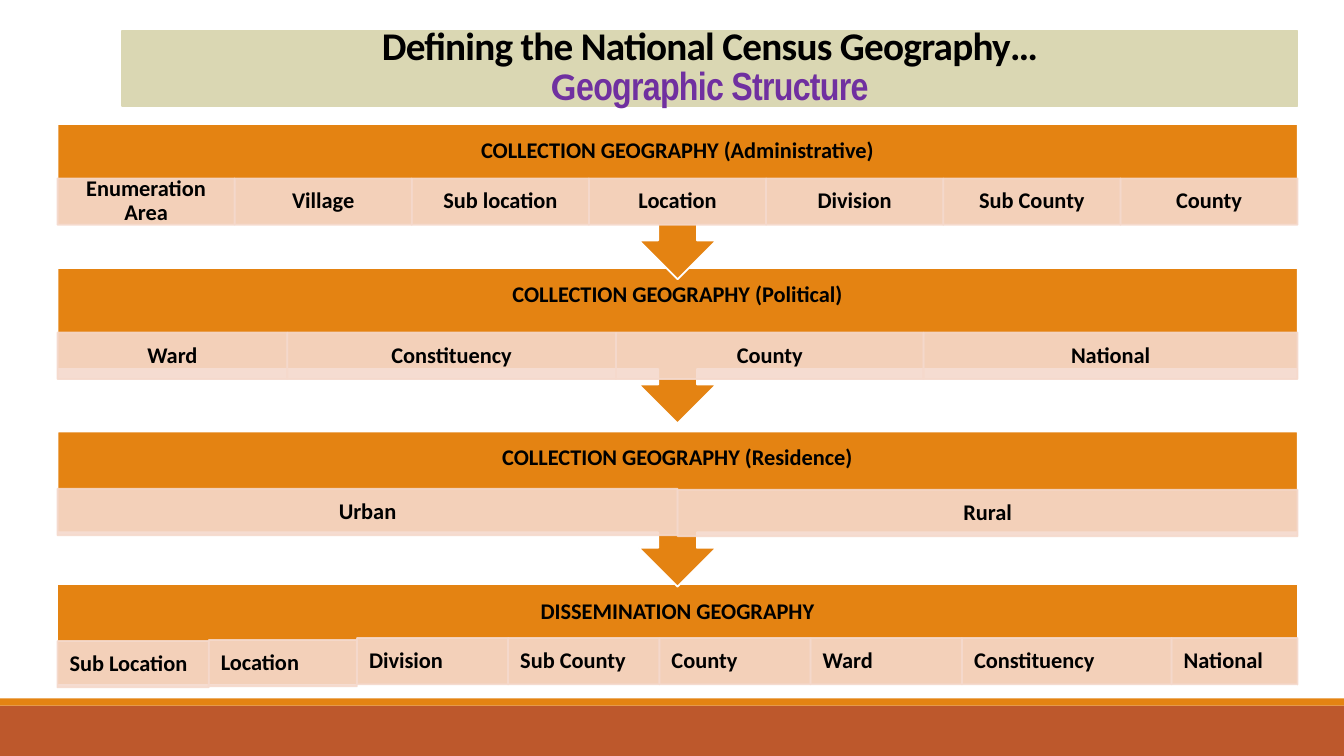
"""Build the slide on the geographic structure of a national census."""
from dataclasses import dataclass
from typing import Any

from lxml.etree import SubElement
from pptx import Presentation
from pptx.dml.color import RGBColor
from pptx.enum.shapes import MSO_SHAPE
from pptx.enum.text import MSO_ANCHOR, MSO_AUTO_SIZE, PP_ALIGN
from pptx.oxml.ns import qn
from pptx.util import Inches, Pt

ORANGE, RUST, PEACH, SAND = "E48312", "BD582C", "F5D9CC", "DAD7B3"
BLACK, WHITE, PURPLE = "000000", "FFFFFF", "7030A0"
LEFT, WIDTH = 0.57, 12.3
BAND_HEIGHT, HEADING_HEIGHT, CELL_HEIGHT, CALLOUT_HEIGHT = 1.0, 0.54, 0.46, 1.54


@dataclass
class Cell:
    """A geographic unit; drop lowers it below its row's top."""
    label: str
    width: float
    drop: float = 0


@dataclass
class Level:
    """A band with a heading and a row of units."""
    heading: str
    top: float
    row_top: float
    cells: list[Cell]
    align: PP_ALIGN = PP_ALIGN.CENTER
    has_arrow: bool = True


ADMINISTRATIVE = ["Enumeration Area", "Village", "Sub location", "Location",
                  "Division", "Sub County", "County"]
LEVELS = [
    Level("COLLECTION GEOGRAPHY (Administrative)", 1.23, 1.77,
          [Cell(label, WIDTH / len(ADMINISTRATIVE)) for label in ADMINISTRATIVE]),
    Level("COLLECTION GEOGRAPHY (Political)", 2.66, 3.3,
          [Cell("Ward", 2.28), Cell("Constituency", 3.26),
           Cell("County", 3.05), Cell("National", 3.71)]),
    Level("COLLECTION GEOGRAPHY (Residence)", 4.28, 4.85,
          [Cell("Urban", WIDTH / 2), Cell("Rural", WIDTH / 2, 0.01)]),
    Level("DISSEMINATION GEOGRAPHY", 5.8, 6.33,
          [Cell("Sub Location", 1.5, 0.03), Cell("Location", 1.47, 0.02),
           Cell("Division", 1.5), Cell("Sub County", 1.5), Cell("County", 1.5),
           Cell("Ward", 1.5), Cell("Constituency", 2.08), Cell("National", 1.25)],
          PP_ALIGN.LEFT, False),
]


def color(value: str) -> RGBColor:
    """Turn a hex string into a colour."""
    return RGBColor.from_string(value)


def set_all(target: Any, values: dict[str, Any]) -> None:
    """Set every named attribute on the target."""
    for name, value in values.items():
        setattr(target, name, value)


def paint(shape: Any, fill: str, line: str | None = None) -> None:
    """Give a shape its fill and outline."""
    shape.fill.solid()
    shape.fill.fore_color.rgb = color(fill)
    if line:
        shape.line.color.rgb = color(line)
        shape.line.width = Pt(1.25)
    else:
        shape.line.fill.background()


def add_block(page: Any, kind: MSO_SHAPE, left: float, top: float, width: float,
              height: float, fill: str, line: str | None = None) -> Any:
    """Add a flat preset shape."""
    block = page.shapes.add_shape(kind, Inches(left), Inches(top),
                                  Inches(width), Inches(height))
    block.shadow.inherit = False
    paint(block, fill, line)
    return block


def add_span(para: Any, text: str, size: float, font: str, ink: str) -> Any:
    """Add a bold run of text."""
    span = para.add_run()
    span.text = text
    set_all(span.font, {"size": Pt(size), "name": font, "bold": True})
    span.font.color.rgb = color(ink)
    return span


def write_label(box: Any, text: str, align: PP_ALIGN, inset: float) -> None:
    """Write one label in the middle of a box."""
    frame = box.text_frame
    set_all(frame, {"word_wrap": True, "vertical_anchor": MSO_ANCHOR.MIDDLE,
                    "margin_left": Inches(0.12), "margin_right": Inches(0.12),
                    "margin_top": Inches(inset), "margin_bottom": Inches(inset)})
    para = frame.paragraphs[0]
    set_all(para, {"alignment": align, "line_spacing": 0.9})
    add_span(para, text, 16, "Calibri", BLACK)


def add_cell(page: Any, cell: Cell, left: float, top: float, align: PP_ALIGN) -> None:
    """Add one slightly transparent unit."""
    box = add_block(page, MSO_SHAPE.RECTANGLE, left, top, cell.width, CELL_HEIGHT,
                    PEACH, PEACH)
    for tint in box.element.spPr.iter(qn("a:srgbClr")):
        SubElement(tint, qn("a:alpha"), val="90000")
    write_label(box, cell.label, align, 0.02)


def add_level(page: Any, level: Level) -> None:
    """Add a band, its heading and its units."""
    kind = MSO_SHAPE.UP_ARROW_CALLOUT if level.has_arrow else MSO_SHAPE.RECTANGLE
    height = CALLOUT_HEIGHT if level.has_arrow else BAND_HEIGHT
    band = add_block(page, kind, LEFT, level.top, WIDTH, height, ORANGE, WHITE)
    band.rotation = 180 if level.has_arrow else 0
    heading = page.shapes.add_textbox(Inches(LEFT), Inches(level.top),
                                      Inches(WIDTH), Inches(HEADING_HEIGHT))
    write_label(heading, level.heading, PP_ALIGN.CENTER, 0.12)
    left = LEFT
    for cell in level.cells:
        add_cell(page, cell, left, level.row_top + cell.drop, level.align)
        left += cell.width


def add_title(page: Any) -> None:
    """Place and write the two-line title."""
    title = page.shapes.title
    set_all(title, {"left": Inches(1.21), "top": Inches(0.31),
                    "width": Inches(11.66), "height": Inches(0.74)})
    paint(title, SAND, SAND)
    frame = title.text_frame
    set_all(frame, {"word_wrap": True, "auto_size": MSO_AUTO_SIZE.NONE,
                    "vertical_anchor": MSO_ANCHOR.MIDDLE})
    para = frame.paragraphs[0]
    set_all(para, {"alignment": PP_ALIGN.CENTER, "line_spacing": 0.85})
    spans = [add_span(para, "Defining the National Census Geography…", 28, "Calibri", BLACK)]
    para.add_line_break()
    spans.append(add_span(para, "G", 28, "Calibri", PURPLE))
    spans.append(add_span(para, "eographic Structure", 28, "Arial Narrow", PURPLE))
    for span in spans:
        span.font._element.set("spc", "-50")


def main() -> None:
    """Build and save the deck."""
    deck = Presentation()
    set_all(deck, {"slide_width": Inches(13.33), "slide_height": Inches(7.5)})
    page = deck.slides.add_slide(deck.slide_layouts[5])
    add_block(page, MSO_SHAPE.RECTANGLE, 0, 7, 13.33, 0.5, RUST)
    add_block(page, MSO_SHAPE.RECTANGLE, 0, 6.93, 13.33, 0.07, ORANGE)
    for level in reversed(LEVELS):
        add_level(page, level)
    add_title(page)
    deck.save("out.pptx")


if __name__ == "__main__":
    main()
